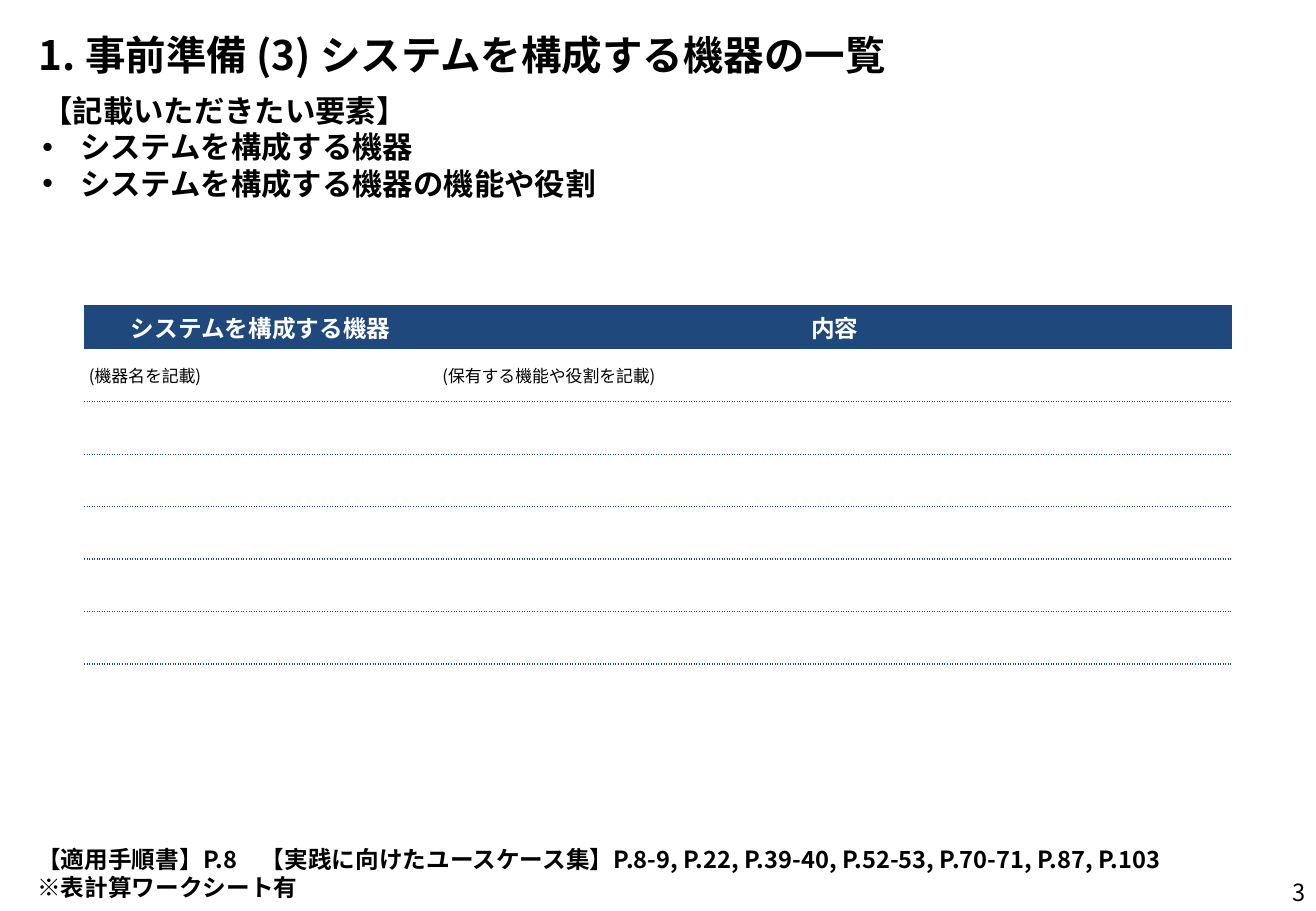
"""Build the slide that lists the devices of a system."""
import pptx
import pptx.util
import pptx.dml.color
import pptx.enum.text
import pptx.oxml
import pptx.oxml.ns
import lxml.etree

Pt = pptx.util.Pt
qn = pptx.oxml.ns.qn
ALIGN = pptx.enum.text.PP_ALIGN
MIDDLE = pptx.enum.text.MSO_ANCHOR.MIDDLE
BLACK = pptx.dml.color.RGBColor(0, 0, 0)
WHITE = pptx.dml.color.RGBColor(255, 255, 255)
NAVY = pptx.dml.color.RGBColor(0x1F, 0x49, 0x7D)
FONT = "Noto Sans CJK JP"
PLAIN = "{2D5ABB26-0587-4C30-8999-92F81FD0307C}"


def style(para, size, bold=True, color=BLACK, align=ALIGN.LEFT):
    """Set the font and alignment of a paragraph."""
    para.alignment = align
    font = para.font
    font.name, font.size, font.bold = FONT, Pt(size), bold
    font.color.rgb = color
    props = para._p.pPr.find(qn("a:defRPr"))
    lxml.etree.SubElement(props, qn("a:ea"), typeface=FONT)


def write(lines, left, top, width, height, size, **looks):
    """Add a text box with one paragraph per line."""
    box = slide.shapes.add_textbox(Pt(left), Pt(top), Pt(width), Pt(height))
    frame = box.text_frame
    frame.word_wrap = True
    frame.text = "\n".join(lines)
    for para in frame.paragraphs:
        style(para, size, **looks)
    return frame


deck = pptx.Presentation()
deck.slide_width, deck.slide_height = Pt(780), Pt(540)
slide = deck.slides.add_slide(deck.slide_layouts[6])

page = write(["3"], 599, 514, 182, 29, 14, bold=False, align=ALIGN.RIGHT)
title = write(["1. 事前準備 (3) システムを構成する機器の一覧"], 16, 14.4, 749, 36, 24)
page.vertical_anchor = title.vertical_anchor = MIDDLE

heads = ["システムを構成する機器", "内容"]
hints = ["(機器名を記載)", "(保有する機能や役割を記載)"]
rows = [heads, hints] + [["", ""]] * 5
table = slide.shapes.add_table(
    len(rows), 2, Pt(49.8), Pt(181), Pt(680.5), Pt(212.6)).table
table._tbl.tblPr.find(qn("a:tableStyleId")).text = PLAIN
table.columns[0].width, table.columns[1].width = Pt(209.5), Pt(471)
for r, texts in enumerate(rows):
    head, last = r == 0, r == len(rows) - 1
    table.rows[r].height = Pt(26 if head else 31.1)
    for c, text in enumerate(texts):
        cell = table.cell(r, c)
        cell.text = text
        cell.vertical_anchor = MIDDLE
        cell.margin_left = cell.margin_right = Pt(2.9)
        cell.margin_top = cell.margin_bottom = Pt(2)
        cell.fill.solid()
        cell.fill.fore_color.rgb = NAVY if head else WHITE
        para = cell.text_frame.paragraphs[0]
        if head:
            style(para, 14, color=WHITE, align=ALIGN.CENTER)
            continue
        style(para, 10, bold=False)
        width = Pt(1 if last else 0.75)
        edge = pptx.oxml.parse_xml(
            f'<a:lnB {pptx.oxml.ns.nsdecls("a")} w="{width}"><a:solidFill>'
            f'<a:srgbClr val="{NAVY}"/></a:solidFill>'
            '<a:prstDash val="sysDot"/></a:lnB>')
        cell._tc.tcPr.insert(0, edge)

write(["【適用手順書】P.8　【実践に向けたユースケース集】"
       "P.8-9, P.22, P.39-40, P.52-53, P.70-71, P.87, P.103",
       "※表計算ワークシート有"], 15, 497, 738, 34, 14)

needs = write(["【記載いただきたい要素】", "システムを構成する機器",
               "システムを構成する機器の機能や役割"], 18, 51, 451, 164, 18)
for para in needs.paragraphs[1:]:
    props = para._p.pPr
    props.set("marL", str(Pt(22.5)))
    props.set("indent", str(-Pt(22.5)))
    mark = lxml.etree.Element(qn("a:buChar"), char="•")
    face = lxml.etree.Element(qn("a:buFont"), typeface="Arial")
    props.insert(0, mark)
    props.insert(0, face)

deck.save("out.pptx")
